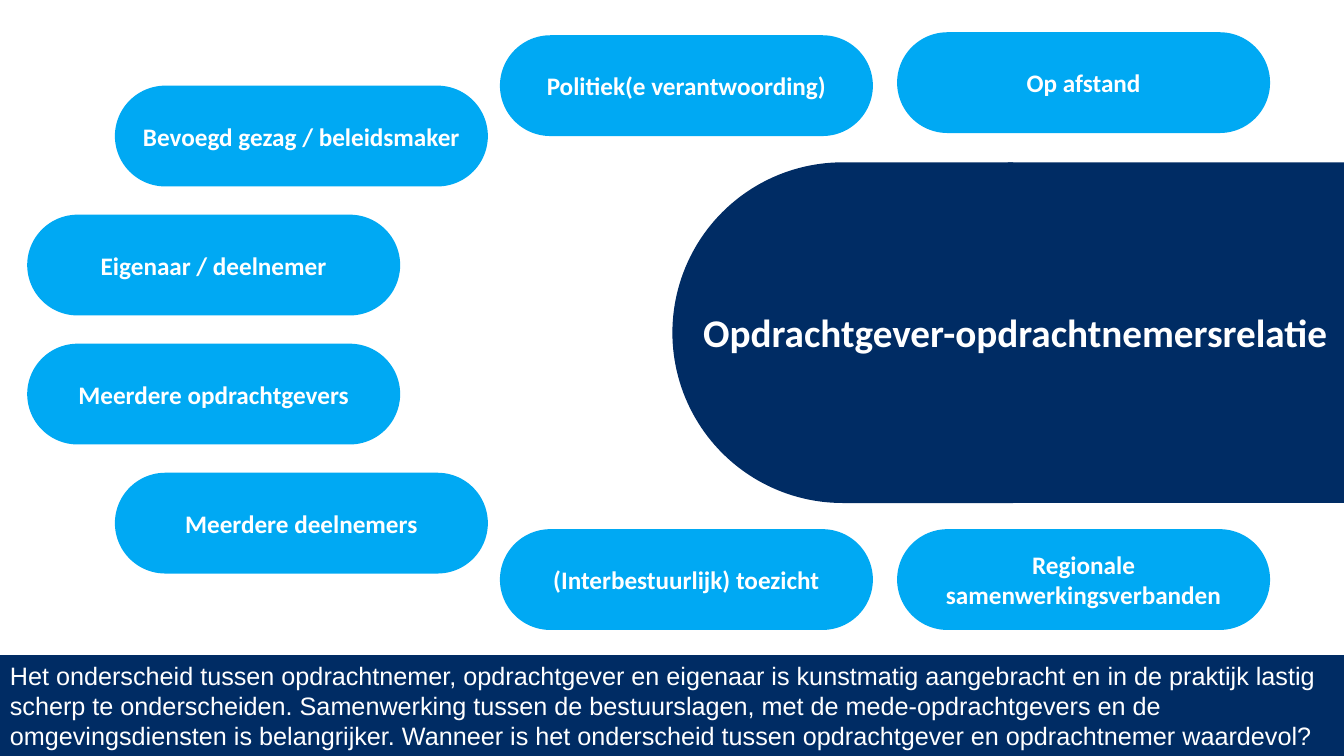
from pptx import Presentation
from pptx.dml.color import RGBColor
from pptx.enum.shapes import MSO_SHAPE
from pptx.enum.text import MSO_ANCHOR, PP_ALIGN
from pptx.util import Inches, Pt

PILL, DELAY, RECT = MSO_SHAPE.ROUNDED_RECTANGLE, MSO_SHAPE.FLOWCHART_DELAY, MSO_SHAPE.RECTANGLE
LEFT, CENTER = PP_ALIGN.LEFT, PP_ALIGN.CENTER
MIDDLE = MSO_ANCHOR.MIDDLE

COLORS = {"navy": "002C64", "sky": "00A9F3", "white": "FFFFFF"}
COLS, ROWS = 133.33, 75  # grid cells of a tenth of an inch


class Board:
    """Style and current slide; all lengths are grid columns and rows."""

    heading_font, body_font = "Calibri", "Arial"
    pill_cols, pill_rows = 37, 10

    def __init__(self, deck):
        self.slide = deck.slides.add_slide(deck.slide_layouts[6])

    def grid(self, *cells):
        return [Inches(cell / 10) for cell in cells]

    def label(self, element, text, size, font, bold=True, align=CENTER):
        frame = element.text_frame
        frame.word_wrap = True
        frame.vertical_anchor = MIDDLE
        frame.text = text
        paragraph = frame.paragraphs[0]
        paragraph.alignment = align
        style = paragraph.runs[0].font
        style.name, style.size, style.bold = font, Pt(size), bold
        style.color.rgb = RGBColor.from_string(COLORS["white"])

    def block(self, kind, col, row, cols, rows, color):
        block = self.slide.shapes.add_shape(kind, *self.grid(col, row, cols, rows))
        block.shadow.inherit = False
        block.fill.solid()
        block.fill.fore_color.rgb = RGBColor.from_string(COLORS[color])
        block.line.fill.background()
        return block

    def pill(self, text, col, row):
        pill = self.block(PILL, col, row, self.pill_cols, self.pill_rows, "sky")
        pill.adjustments[0] = 0.5
        self.label(pill, text, 18, self.heading_font)

    def title(self, text, col, row, cols, rows):
        title = self.slide.shapes.add_textbox(*self.grid(col, row, cols, rows))
        self.label(title, text, 28, self.heading_font)

    def footer(self, text, rows):
        footer = self.block(RECT, 0, ROWS - rows, COLS, rows, "navy")
        self.label(footer, text, 18, self.body_font, bold=False, align=LEFT)


def main():
    deck = Presentation()
    deck.slide_width, deck.slide_height = Inches(COLS / 10), Inches(ROWS / 10)
    board = Board(deck)

    # Central relation: rounded end on the left, running to the slide's edge
    rounded_end = board.block(DELAY, 66.7, 16.1, 33.8, 33.8, "navy")
    rounded_end.rotation = 180
    board.block(RECT, 100, 16.1, COLS - 100, 33.8, "navy")
    board.title("Opdrachtgever-opdrachtnemersrelatie", 68.1, 30.1, 65.2, 5.7)

    # Roles down the left side, the middle two set further out
    inner, outer = 11.4, 2.7
    left_roles = [
        ("Bevoegd gezag / beleidsmaker", inner),
        ("Eigenaar / deelnemer", outer),
        ("Meerdere opdrachtgevers", outer),
        ("Meerdere deelnemers", inner),
    ]
    for index, (role, col) in enumerate(left_roles):
        board.pill(role, col, 8.5 + index * 12.8)

    # Themes above and below the relation
    themes = [
        (49.6, 3.5, "Politiek(e verantwoording)", "(Interbestuurlijk) toezicht"),
        (89, 3.2, "Op afstand", "Regionale samenwerkingsverbanden"),
    ]
    for col, top_row, above, below in themes:
        board.pill(above, col, top_row)
        board.pill(below, col, 52.5)

    # Closing remark
    board.footer(
        "Het onderscheid tussen opdrachtnemer, opdrachtgever en eigenaar is kunstmatig "
        "aangebracht en in de praktijk lastig scherp te onderscheiden. Samenwerking tussen "
        "de bestuurslagen, met de mede-opdrachtgevers en de omgevingsdiensten is "
        "belangrijker. Wanneer is het onderscheid tussen opdrachtgever en opdrachtnemer "
        "waardevol?",
        10,
    )

    deck.save("out.pptx")


if __name__ == "__main__":
    main()
